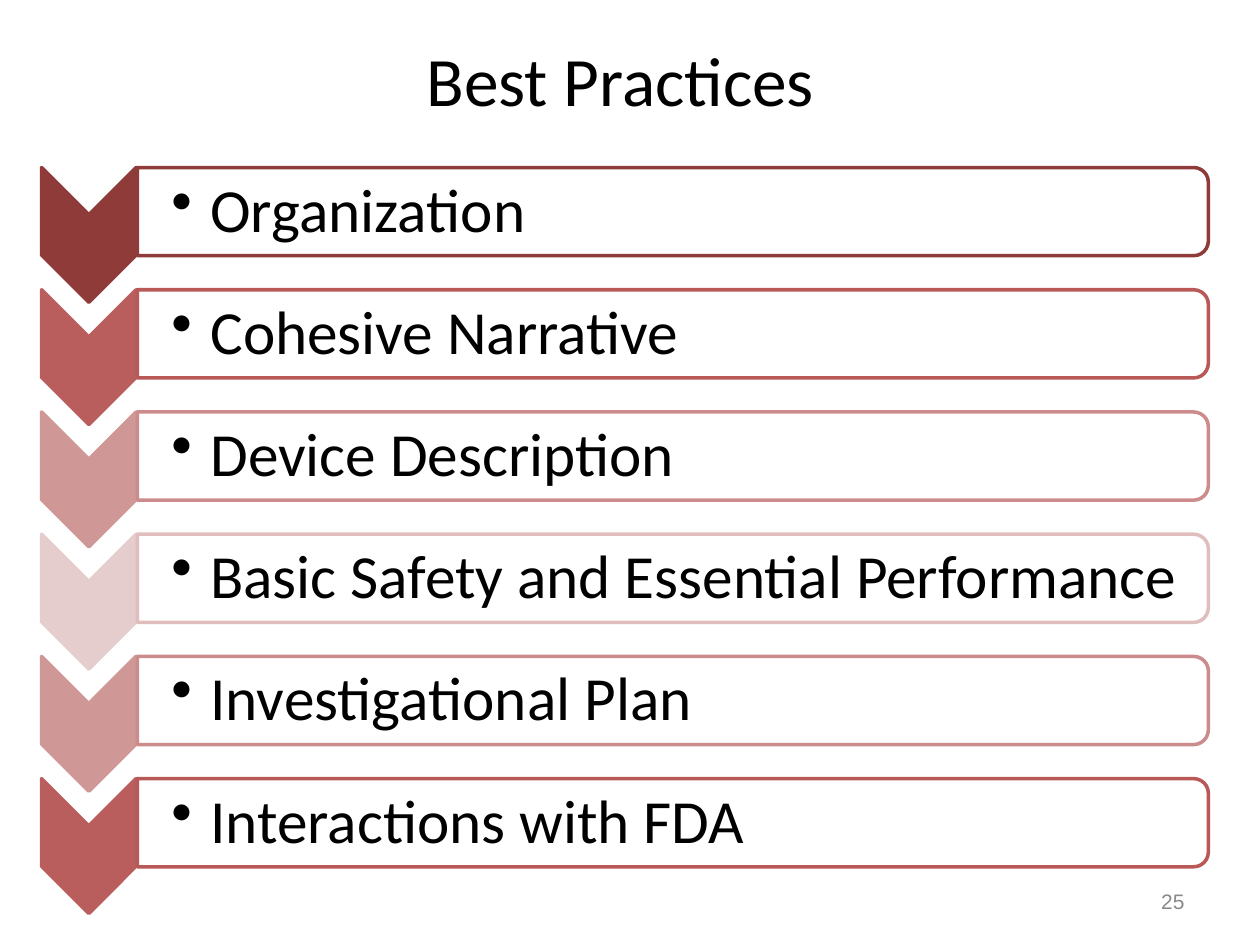
"""Build the Best Practices slide: six chevrons, each with a bulleted bar."""
from lxml.etree import SubElement
from pptx import Presentation
from pptx.dml.color import RGBColor
from pptx.enum.shapes import MSO_SHAPE as SHAPE
from pptx.enum.text import MSO_ANCHOR as ANCHOR, PP_ALIGN as ALIGN
from pptx.oxml.ns import qn
from pptx.util import Inches, Pt

BLACK = RGBColor(0x00, 0x00, 0x00)
WHITE = RGBColor(0xFF, 0xFF, 0xFF)
GRAY = RGBColor(0x89, 0x89, 0x89)
DARK = (RGBColor(0x8E, 0x3B, 0x39), RGBColor(0x8E, 0x3B, 0x39))
MEDIUM = (RGBColor(0xB9, 0x5E, 0x5C), RGBColor(0xB8, 0x59, 0x57))
LIGHT = (RGBColor(0xCF, 0x97, 0x96), RGBColor(0xCB, 0x8C, 0x8B))
PALE = (RGBColor(0xE6, 0xCD, 0xCD), RGBColor(0xE0, 0xBE, 0xBE))

PRACTICES = [
    ("Organization", DARK),
    ("Cohesive Narrative", MEDIUM),
    ("Device Description", LIGHT),
    ("Basic Safety and Essential Performance", PALE),
    ("Investigational Plan", LIGHT),
    ("Interactions with FDA", MEDIUM),
]
ROW_STEP = 0.97


def add_turned(kind, left, top, width, height, fill, line):
    sp = s.shapes.add_shape(kind, Inches(left), Inches(top), Inches(width), Inches(height))
    sp.rotation = 90
    sp.shadow.inherit = False
    sp.fill.solid()
    sp.fill.fore_color.rgb = fill
    sp.line.color.rgb = line
    sp.line.width = Pt(2)
    return sp


def add_run(p, text, size, font, color):
    r = p.add_run()
    r.text = text
    r.font.size = Pt(size)
    r.font.name = font
    r.font.color.rgb = color


prs = Presentation()
prs.slide_width = Inches(10)
prs.slide_height = Inches(7.5)
s = prs.slides.add_slide(prs.slide_layouts[5])

title = s.shapes.title
title.left, title.top = Inches(0), Inches(0.25)
title.width, title.height = Inches(9.85), Inches(0.75)
tf = title.text_frame
tf.vertical_anchor = ANCHOR.MIDDLE
p = tf.paragraphs[0]
p.alignment = ALIGN.CENTER
add_run(p, "Best Practices", 39.6, "Calibri", BLACK)

for i, (practice, (fill, line)) in enumerate(PRACTICES):
    offset = i * ROW_STEP
    add_turned(SHAPE.CHEVRON, 0.17, 1.49 + offset, 1.07, 0.75, fill, fill)
    bar = add_turned(SHAPE.ROUND_2_SAME_RECTANGLE, 4.99, -2.57 + offset, 0.7, 8.5, WHITE, line)
    white = bar.fill._xPr.find(qn("a:solidFill"))[0]
    SubElement(white, qn("a:alpha"), val="90000")

    box = s.shapes.add_textbox(Inches(1.09), Inches(1.37 + offset), Inches(8.46), Inches(0.63))
    tf = box.text_frame
    tf.word_wrap = True
    tf.vertical_anchor = ANCHOR.MIDDLE
    tf.margin_left = Inches(0.27)
    tf.margin_top = tf.margin_right = tf.margin_bottom = Inches(0.02)
    p = tf.paragraphs[0]
    p.level = 1
    pPr = p._p.get_or_add_pPr()
    pPr.set("marL", str(Inches(0.31)))
    pPr.set("indent", str(-Inches(0.31)))
    SubElement(pPr, qn("a:buChar"), char="•")
    p.line_spacing = 0.9
    add_run(p, practice, 35, "Calibri", BLACK)

number = s.shapes.add_textbox(Inches(7.17), Inches(6.95), Inches(2.33), Inches(0.4))
tf = number.text_frame
tf.word_wrap = True
tf.vertical_anchor = ANCHOR.MIDDLE
p = tf.paragraphs[0]
p.alignment = ALIGN.RIGHT
add_run(p, "25", 12, "Arial", GRAY)

prs.save("out.pptx")
